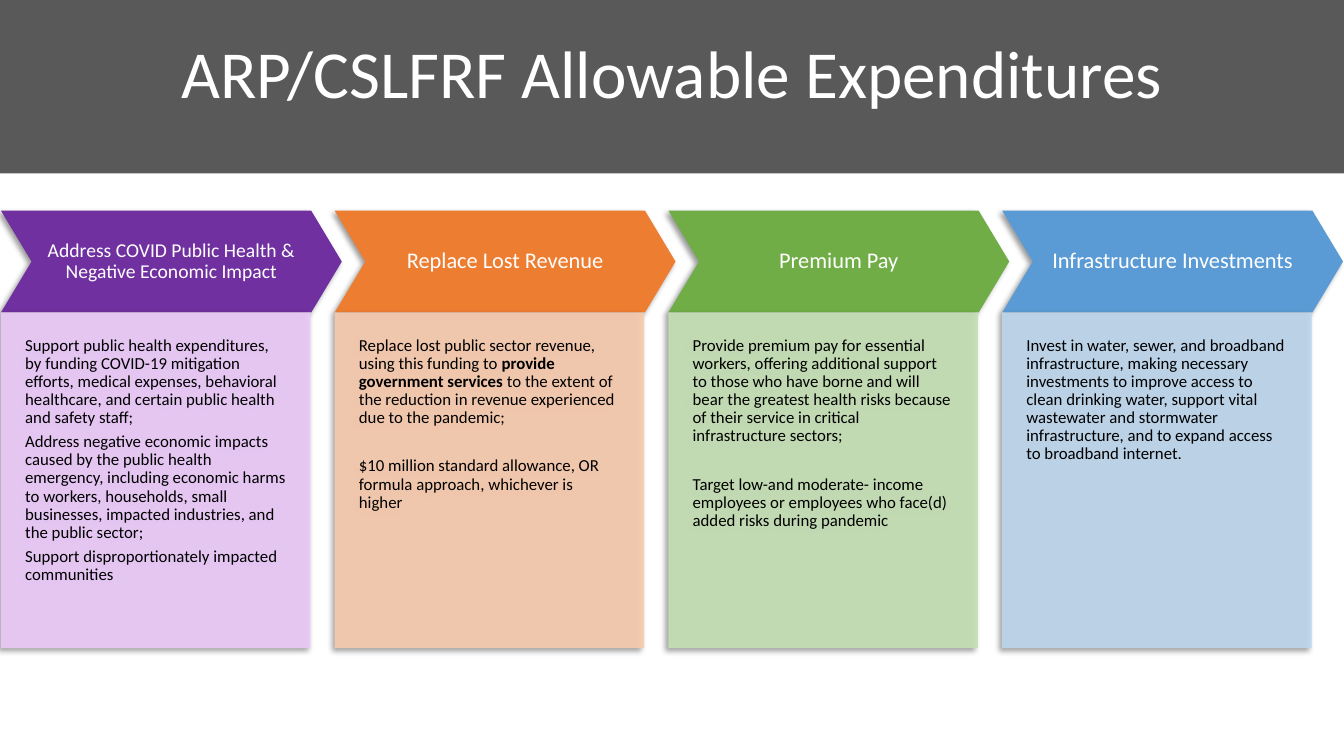
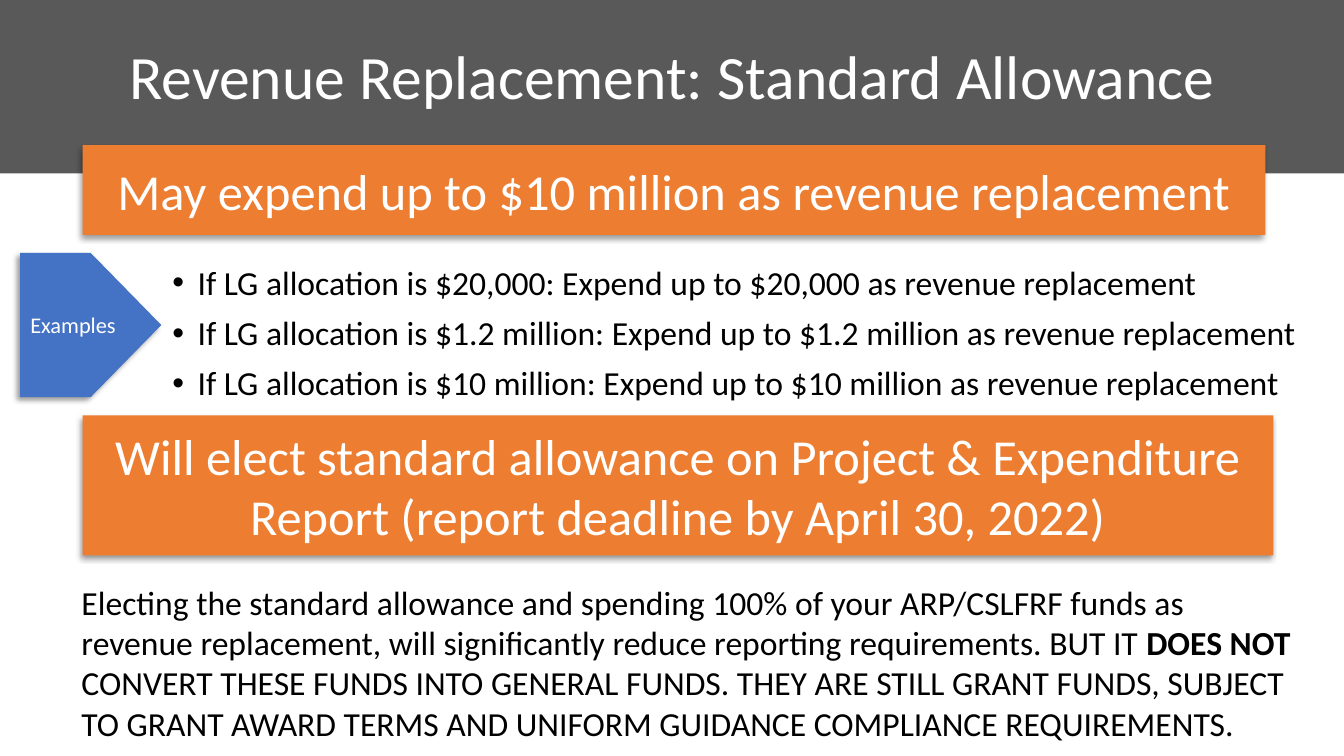
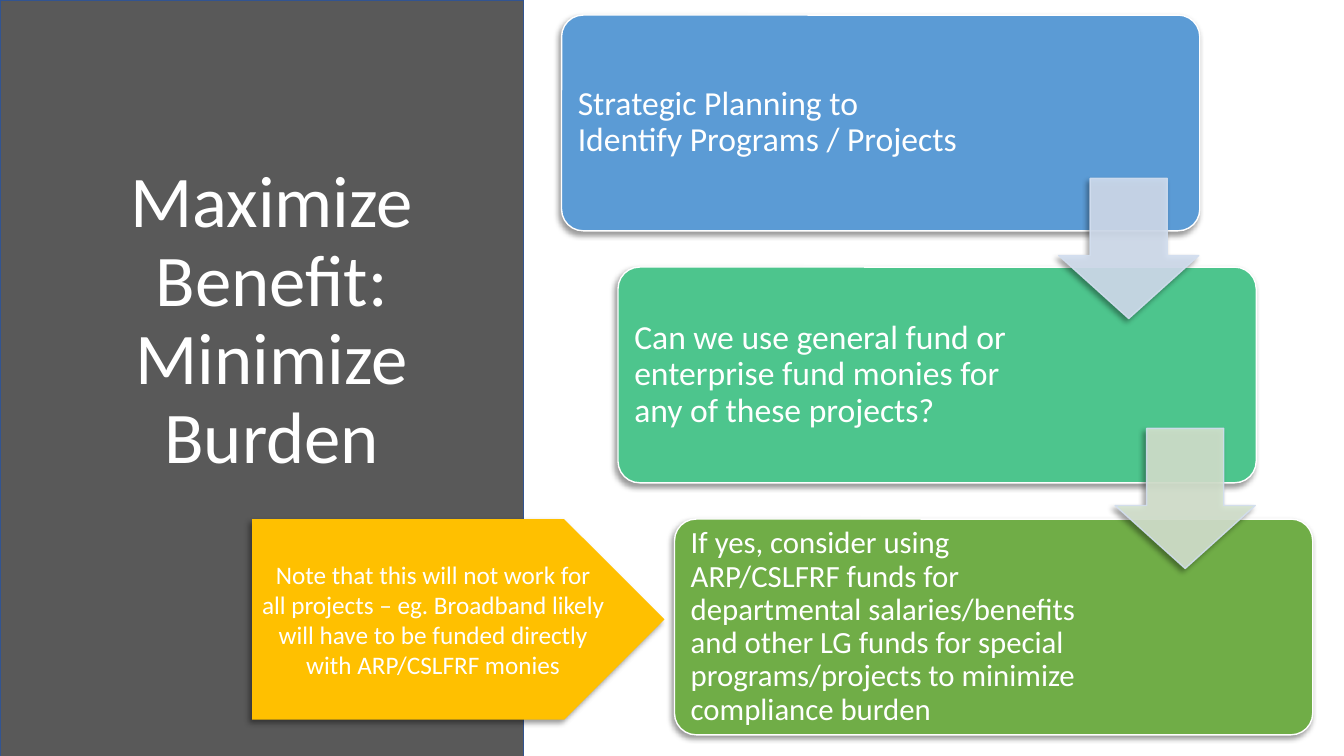
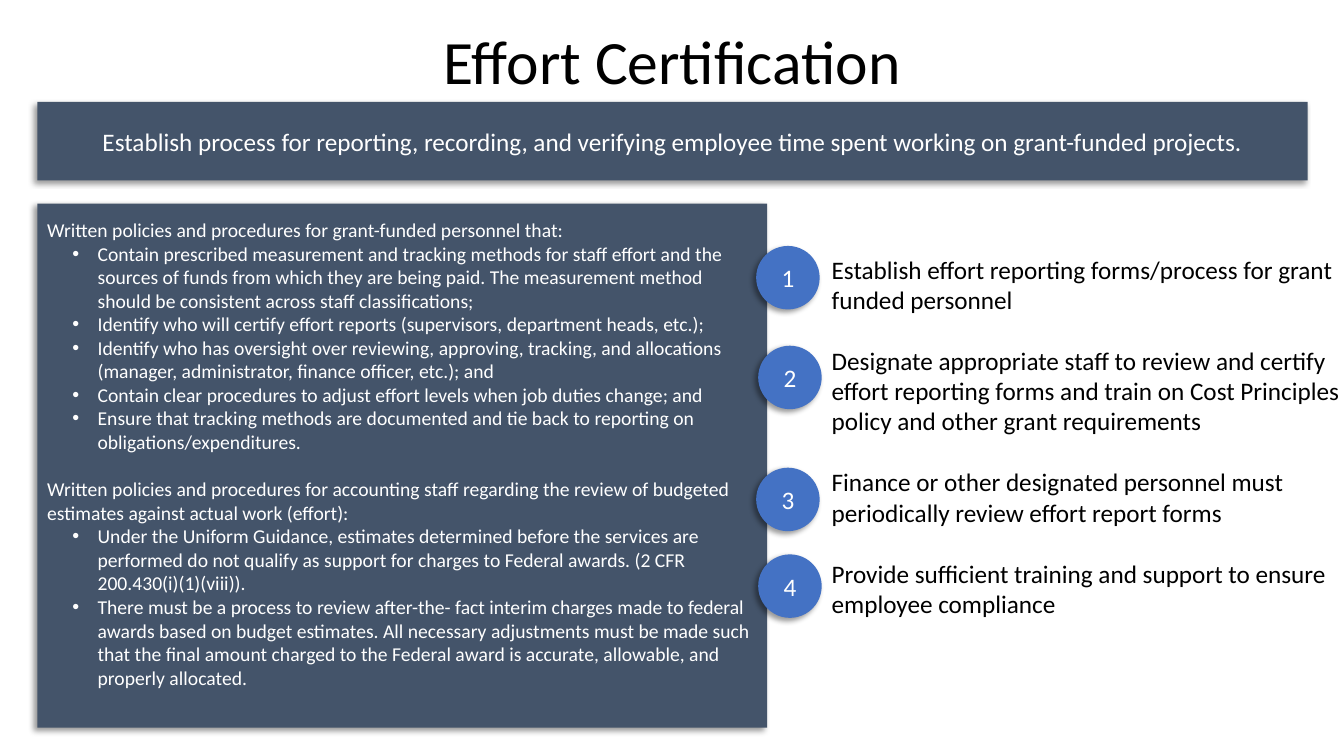
"""Build four slides on spending and documenting ARP/CSLFRF grant funds."""
from dataclasses import dataclass

from lxml import etree
from pptx import Presentation
from pptx.dml.color import RGBColor
from pptx.enum.shapes import MSO_SHAPE
from pptx.enum.text import MSO_ANCHOR, MSO_AUTO_SIZE, PP_ALIGN
from pptx.oxml.ns import qn
from pptx.util import Pt

PX = 9144
SLIDE_W, SLIDE_H = 1333, 750
FONT = "Calibri"
LEFT, CENTER = PP_ALIGN.LEFT, PP_ALIGN.CENTER
TOP, MIDDLE = MSO_ANCHOR.TOP, MSO_ANCHOR.MIDDLE
NO_FIT = MSO_AUTO_SIZE.NONE
RECT, ROUND, OVAL = MSO_SHAPE.RECTANGLE, MSO_SHAPE.ROUNDED_RECTANGLE, MSO_SHAPE.OVAL
CHEVRON, PENTAGON, DOWN = MSO_SHAPE.CHEVRON, MSO_SHAPE.PENTAGON, MSO_SHAPE.DOWN_ARROW
TITLE_ONLY, TITLE_AND_BODY = 5, 1

COLORS = {
    "white": "FFFFFF", "black": "000000", "band": "595959", "band_line": "325491",
    "purple": "7030A0", "orange": "ED7D31", "green": "70AD47", "sky": "5B9BD5",
    "pale_purple": "ECCAFA", "pale_orange": "F8CBAD", "pale_green": "C5E0B4",
    "pale_sky": "BDD7EE", "blue": "4472C4", "mint": "4DC58D", "gold": "FFC000",
    "slate": "44546A", "arrow_blue": "D2DEEF", "arrow_green": "D5E3CF",
}
INSETS = (10, 5, 10, 5)


@dataclass
class Para:
    """A paragraph; ** marks bold, indent and before are in px and points."""
    text: str
    indent: int = 0
    before: float = 0


def rgb(name):
    """Return the named colour."""
    return RGBColor.from_string(COLORS[name])


def set_attrs(obj, values):
    """Set every attribute in a dict of format values."""
    for name, value in values.items():
        setattr(obj, name, value)


def place(sp, box):
    """Move and size a shape to a box in px."""
    set_attrs(sp, dict(zip(("left", "top", "width", "height"), (v * PX for v in box))))


def add_bullet(p, indent):
    """Give a paragraph a hanging bullet."""
    pPr = p._p.get_or_add_pPr()
    pPr.set("marL", str(indent * PX))
    pPr.set("indent", str(-25 * PX))
    etree.SubElement(pPr, qn("a:buFont")).set("typeface", "Arial")
    etree.SubElement(pPr, qn("a:buChar")).set("char", "•")


def write(sp, paras, size, color="white", align=CENTER, anchor=MIDDLE,
          insets=INSETS, spacing=None, wrap=True):
    """Fill a shape with formatted paragraphs."""
    tf = sp.text_frame
    left, top, right, bottom = (v * PX for v in insets)
    set_attrs(tf, {"word_wrap": wrap, "auto_size": NO_FIT, "vertical_anchor": anchor,
                   "margin_left": left, "margin_top": top,
                   "margin_right": right, "margin_bottom": bottom})
    for i, para in enumerate(paras):
        if isinstance(para, str):
            para = Para(para)
        p = tf.paragraphs[0] if i == 0 else tf.add_paragraph()
        if para.indent:
            add_bullet(p, para.indent)
        set_attrs(p, {"alignment": align, "line_spacing": spacing,
                      "space_before": Pt(para.before)})
        for n, part in enumerate(para.text.split("**")):
            r = p.add_run()
            r.text = part
            set_attrs(r.font, {"name": FONT, "size": Pt(size), "bold": n % 2 == 1})
            r.font.color.rgb = rgb(color)


def add_alpha(fill_xml, percent):
    """Make a solid fill partly transparent."""
    clr = next(fill_xml.iter(qn("a:srgbClr")))
    etree.SubElement(clr, qn("a:alpha")).set("val", str(percent * 1000))


def add_shadow(sp):
    """Add the soft shadow that falls to the lower left."""
    effects = sp._element.spPr.find(qn("a:effectLst"))
    shadow = etree.SubElement(effects, qn("a:outerShdw"), blurRad="50800", dist="38100",
                              dir="8100000", algn="tr", rotWithShape="0")
    clr = etree.SubElement(shadow, qn("a:srgbClr"), val=COLORS["black"])
    etree.SubElement(clr, qn("a:alpha"), val="40000")


def add_block(s, kind, box, fill, line=None, alpha=None, adjust=(), shadow=True):
    """Add a filled preset shape."""
    sp = s.shapes.add_shape(kind, *(v * PX for v in box))
    sp.shadow.inherit = False
    sp.fill.solid()
    sp.fill.fore_color.rgb = rgb(fill)
    if line:
        sp.line.color.rgb = rgb(line)
        sp.line.width = Pt(1)
    else:
        sp.line.fill.background()
    if alpha:
        spPr = sp._element.spPr
        add_alpha(spPr.find(qn("a:solidFill")), alpha)
        if line:
            add_alpha(spPr.find(qn("a:ln")), alpha)
    for i, value in enumerate(adjust):
        sp.adjustments[i] = value
    if shadow:
        add_shadow(sp)
    return sp


def add_text(s, box, paras, size, **fmt):
    """Add a plain black text box."""
    sp = s.shapes.add_textbox(*(v * PX for v in box))
    write(sp, paras, size, color="black", align=LEFT, anchor=TOP, **fmt)


def add_band(s, box=(0, 0, SLIDE_W, 172), line=None):
    """Put a grey band behind everything else."""
    el = add_block(s, RECT, box, "band", line=line, shadow=False)._element
    tree = el.getparent()
    tree.remove(el)
    tree.insert(2, el)


def new_slide(prs, title, box, size, color="white", layout=TITLE_ONLY):
    """Add a slide with its title placed and styled."""
    s = prs.slides.add_slide(prs.slide_layouts[layout])
    place(s.shapes.title, box)
    write(s.shapes.title, [title], size, color=color, spacing=0.9)
    return s


def build_expenditures(prs):
    """Four allowable uses as chevrons over text panels."""
    s = new_slide(prs, "ARP/CSLFRF Allowable Expenditures", (70, 14, 1193, 124), 48)
    add_band(s)
    columns = [
        ("Address COVID Public Health & Negative Economic Impact", 14, "purple", [
            "Support public health expenditures, by funding COVID-19 mitigation efforts, "
            "medical expenses, behavioral healthcare, and certain public health and "
            "safety staff;",
            Para("Address negative economic impacts caused by the public health emergency, "
                 "including economic harms to workers, households, small businesses, "
                 "impacted industries, and the public sector;", before=4.2),
            Para("Support disproportionately impacted communities", before=4.2)]),
        ("Replace Lost Revenue", 16, "orange", [
            "Replace lost public sector revenue, using this funding to **provide "
            "government services **to the extent of the reduction in revenue experienced "
            "due to the pandemic;",
            Para("$10 million standard allowance, OR formula approach, whichever is "
                 "higher", before=21.5)]),
        ("Premium Pay", 16, "green", [
            "Provide premium pay for essential workers, offering additional support to "
            "those who have borne and will bear the greatest health risks because of "
            "their service in critical infrastructure sectors;",
            Para("Target low-and moderate- income employees or employees who face(d) "
                 "added risks during pandemic", before=21.5)]),
        ("Infrastructure Investments", 16, "sky", [
            "Invest in water, sewer, and broadband infrastructure, making necessary "
            "investments to improve access to clean drinking water, support vital "
            "wastewater and stormwater infrastructure, and to expand access to "
            "broadband internet."]),
    ]
    for i, (heading, size, color, paras) in enumerate(columns):
        x = 1 + 331 * i
        head = add_block(s, CHEVRON, (x, 209, 338, 101), color, adjust=[0.3])
        write(head, [heading], size, insets=(13,) * 4, spacing=0.9)
        panel = add_block(s, RECT, (x, 310, 307, 333), "pale_" + color, alpha=90)
        write(panel, paras, 12, color="black", align=LEFT, anchor=TOP,
              insets=(24, 24, 24, 49), spacing=0.9)


def build_allowance(prs):
    """The standard allowance with examples."""
    s = new_slide(prs, "Revenue Replacement: Standard Allowance", (92, 6, 1150, 145), 44,
                  layout=TITLE_AND_BODY)
    add_band(s)
    body = s.placeholders[1]
    place(body, (161, 259, 1142, 401))
    amounts = ["$20,000", "$1.2 million", "$10 million"]
    examples = [Para(f"If LG allocation is {a}: Expend up to {a} as revenue replacement",
                     indent=25, before=10 if i else 0) for i, a in enumerate(amounts)]
    write(body, examples, 24, color="black", align=LEFT, anchor=TOP, spacing=0.9)
    banners = [
        ((82, 144, 1173, 89), "May expend up to $10 million as revenue replacement"),
        ((82, 412, 1181, 139), "Will elect standard allowance on Project & Expenditure "
                               "Report (report deadline by April 30, 2022)"),
    ]
    for box, text in banners:
        write(add_block(s, RECT, box, "orange"), [text], 36)
    tag = add_block(s, PENTAGON, (20, 251, 140, 143), "blue")
    write(tag, ["Examples"], 16, wrap=False)
    add_text(s, (71, 572, 1231, 172), [
        "Electing the standard allowance and spending 100% of your ARP/CSLFRF funds as "
        "revenue replacement, will significantly reduce reporting requirements. BUT IT "
        "**DOES NOT **CONVERT THESE FUNDS INTO GENERAL FUNDS. THEY ARE STILL GRANT FUNDS, "
        "SUBJECT TO GRANT AWARD TERMS AND UNIFORM GUIDANCE COMPLIANCE REQUIREMENTS."], 24)


def build_benefit(prs):
    """Three stepped cards joined by arrows."""
    s = new_slide(prs, "Maximize Benefit: Minimize Burden", (85, 15, 369, 609), 52)
    add_band(s, (0, 0, 519, 761), line="band_line")
    cards = [
        ("Strategic Planning to Identify Programs / Projects", 24, "sky", 228),
        ("Can we use general fund or enterprise fund monies for any of these projects?",
         24, "mint", 205),
        ("If yes, consider using ARP/CSLFRF funds for departmental salaries/benefits and "
         "other LG funds for special programs/projects to minimize compliance burden",
         22, "green", 205),
    ]
    for i, (text, size, color, right) in enumerate(cards):
        card = add_block(s, ROUND, (557 + 56 * i, 15 + 250 * i, 633, 214), color,
                         line="white", adjust=[0.1])
        write(card, [text], size, align=LEFT, insets=(10, 10, right, 10), spacing=0.9)
    for i, color in enumerate(["arrow_blue", "arrow_green"]):
        add_block(s, DOWN, (1050 + 56 * i, 177 + 248 * i, 139, 139), color,
                  line="arrow_blue", alpha=90, adjust=[0.55, 0.45])
    note = add_block(s, PENTAGON, (250, 515, 409, 199), "gold")
    write(note, ["Note that this will not work for all projects – eg. Broadband likely "
                 "will have to be funded directly with ARP/CSLFRF monies"], 18)


def build_effort(prs):
    """Effort certification policies and numbered steps."""
    s = new_slide(prs, "Effort Certification", (67, 25, 1200, 78), 44, color="black")
    banner = add_block(s, RECT, (37, 101, 1260, 78), "slate")
    write(banner, ["Establish process for reporting, recording, and verifying employee "
                   "time spent working on grant-funded projects."], 18)
    sections = [
        ("Written policies and procedures for grant-funded personnel that:", [
            "Contain prescribed measurement and tracking methods for staff effort and the "
            "sources of funds from which they are being paid. The measurement method "
            "should be consistent across staff classifications;",
            "Identify who will certify effort reports (supervisors, department heads, "
            "etc.);",
            "Identify who has oversight over reviewing, approving, tracking, and "
            "allocations (manager, administrator, finance officer, etc.); and",
            "Contain clear procedures to adjust effort levels when job duties change; and",
            "Ensure that tracking methods are documented and tie back to reporting on "
            "obligations/expenditures."]),
        ("Written policies and procedures for accounting staff regarding the review of "
         "budgeted estimates against actual work (effort):", [
            "Under the Uniform Guidance, estimates determined before the services are "
            "performed do not qualify as support for charges to Federal awards. (2 CFR "
            "200.430(i)(1)(viii)).",
            "There must be a process to review after-the- fact interim charges made to "
            "federal awards based on budget estimates. All necessary adjustments must be "
            "made such that the final amount charged to the Federal award is accurate, "
            "allowable, and properly allocated."]),
    ]
    policies = []
    for i, (heading, items) in enumerate(sections):
        policies.append(Para(heading, before=17 * i))
        policies += [Para(item, indent=50) for item in items]
    panel = add_block(s, RECT, (37, 202, 724, 520), "slate")
    write(panel, policies, 14, align=LEFT, insets=(10, 5, 10, 29))
    steps = [
        "Establish effort reporting forms/process for grant funded personnel",
        "Designate appropriate staff to review and certify effort reporting forms and "
        "train on Cost Principles policy and other grant requirements",
        "Finance or other designated personnel must periodically review effort report "
        "forms",
        "Provide sufficient training and support to ensure employee compliance",
    ]
    add_text(s, (815, 247, 518, 404),
             [Para(step, before=22 if i else 0) for i, step in enumerate(steps)], 18,
             insets=(10, 5, 0, 5))
    for i, y in enumerate([244, 343, 464, 550]):
        circle = add_block(s, OVAL, (750 + 2 * (i % 2), y, 63, 63), "blue")
        write(circle, [str(i + 1)], 18)


def main():
    """Build and save the presentation."""
    prs = Presentation()
    set_attrs(prs, {"slide_width": SLIDE_W * PX, "slide_height": SLIDE_H * PX})
    for build in (build_expenditures, build_allowance, build_benefit, build_effort):
        build(prs)
    prs.save("out.pptx")


if __name__ == "__main__":
    main()
